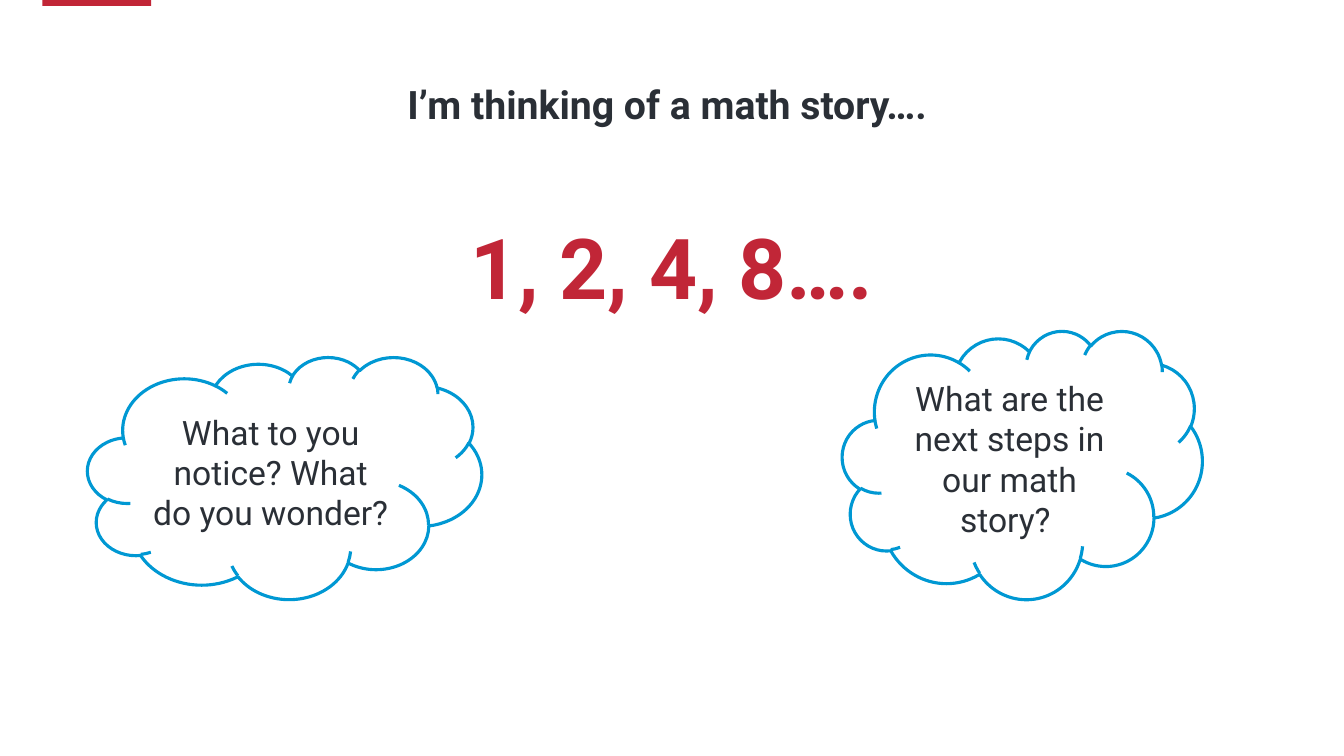
from pptx import Presentation
from pptx.dml.color import RGBColor
from pptx.enum.shapes import MSO_SHAPE
from pptx.enum.text import MSO_ANCHOR, PP_ALIGN
from pptx.util import Cm, Pt

RECTANGLE, CLOUD = MSO_SHAPE.RECTANGLE, MSO_SHAPE.CLOUD
TOP, MIDDLE = MSO_ANCHOR.TOP, MSO_ANCHOR.MIDDLE
CENTER = PP_ALIGN.CENTER

RED = RGBColor(0xC1, 0x26, 0x37)
INK = RGBColor(0x2A, 0x2F, 0x36)
BLUE = RGBColor(0x00, 0x98, 0xD3)
WHITE = RGBColor(0xFF, 0xFF, 0xFF)

# Content: lengths in centimetres
PAGE_WIDTH, PAGE_HEIGHT = 33.87, 19.05
ACCENT_BAR = (1.07, 0, 2.74, 0.15)
HEADINGS = [  # text, top, height, size, colour
    ("I’m thinking of a math story…. ", 1.9, 1.45, 28, INK),
    ("1, 2, 4, 8….", 5.31, 2.82, 60, RED),
]
THOUGHTS = [  # text, (left, top, width, height)
    ("What to you notice? What do you wonder? ", (2.21, 8.99, 9.93, 6.1)),
    ("What are the next steps in our math story? ", (21.23, 8.33, 9.07, 6.76)),
]


def write(box, text, size, color=INK, bold=False, anchor=TOP):
    frame = box.text_frame
    frame.word_wrap = True
    frame.vertical_anchor = anchor
    para = frame.paragraphs[0]
    para.alignment = CENTER
    span = para.add_run()
    span.text = text
    span.font.name = "Roboto"
    span.font.size = Pt(size)
    span.font.bold = bold
    span.font.color.rgb = color


def add_filled(page, kind, place, fill):
    shape = page.shapes.add_shape(kind, *map(Cm, place))
    shape.shadow.inherit = False
    shape.fill.solid()
    shape.fill.fore_color.rgb = fill
    return shape


deck = Presentation()
deck.slide_width, deck.slide_height = Cm(PAGE_WIDTH), Cm(PAGE_HEIGHT)
page = deck.slides.add_slide(deck.slide_layouts[6])

# Accent bar at the top edge
bar = add_filled(page, RECTANGLE, ACCENT_BAR, RED)
bar.line.fill.background()

# Full-width headings
for text, top, height, size, color in HEADINGS:
    box = page.shapes.add_textbox(0, Cm(top), Cm(PAGE_WIDTH), Cm(height))
    write(box, text, size, color=color, bold=True)

# Thought clouds
for text, place in THOUGHTS:
    cloud = add_filled(page, CLOUD, place, WHITE)
    cloud.line.color.rgb = BLUE
    cloud.line.width = Pt(2.25)
    write(cloud, text, 24, anchor=MIDDLE)

deck.save("out.pptx")
